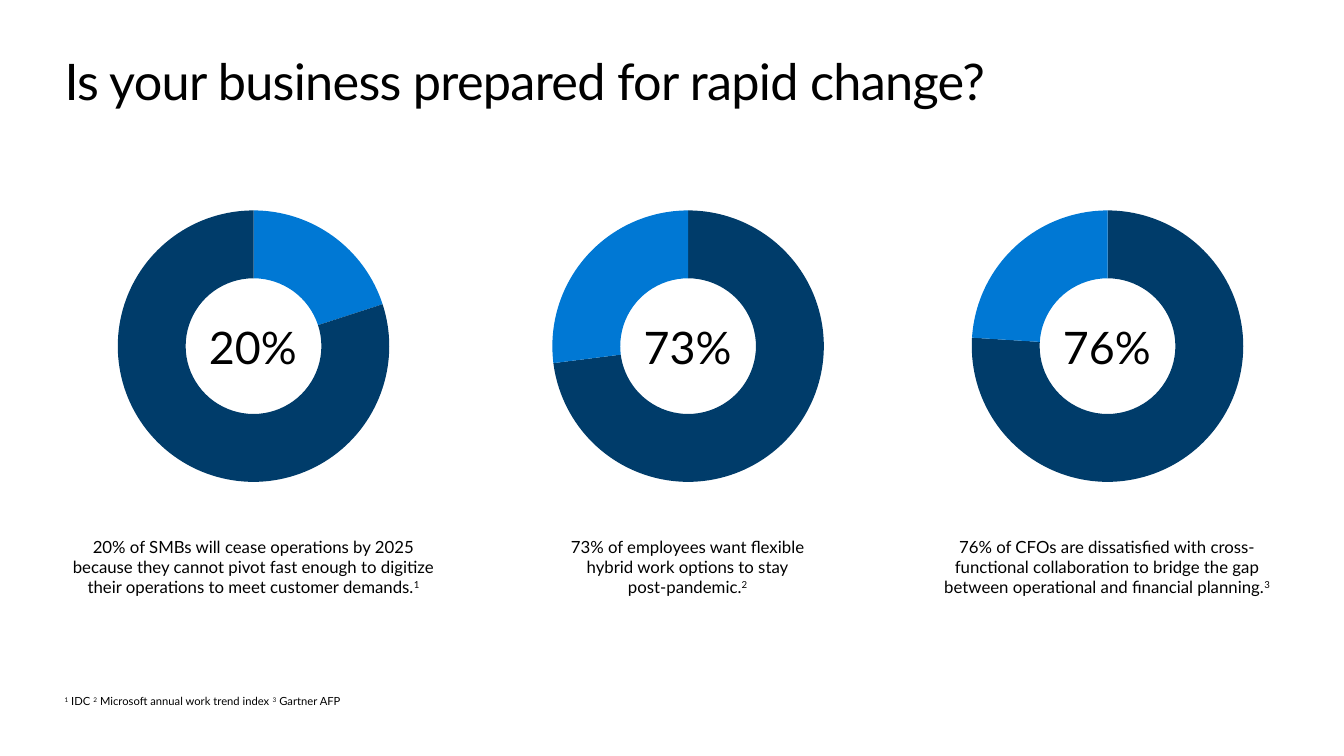
from pptx import Presentation
from pptx.chart.data import CategoryChartData
from pptx.dml.color import RGBColor
from pptx.enum.chart import XL_CHART_TYPE
from pptx.enum.shapes import MSO_SHAPE
from pptx.enum.text import MSO_ANCHOR, PP_ALIGN
from pptx.oxml import parse_xml
from pptx.oxml.ns import nsdecls, qn
from pptx.util import Emu, Pt

PX = 9144
FONT = "Lato"
BLACK, NAVY, BLUE = "000000", "003C6A", "0078D4"
CHART_SIZE, CHART_TOP = 311, 188
CENTER_SIZE, CENTER_TOP = 156, 266
CAPTION_TOP, CAPTION_HEIGHT = 532, 61

STATS = [
    (251, 20, (BLUE, NAVY), 373,
     "20% of SMBs will cease operations by 2025 because they cannot pivot fast "
     "enough to digitize their operations to meet customer demands.^1^"),
    (682, 73, (NAVY, BLUE), 342,
     "73% of employees want flexible\nhybrid work options to stay\npost-pandemic.^2^"),
    (1098, 76, (NAVY, BLUE), 342,
     "76% of CFOs are dissatisfied with cross-functional collaboration to bridge "
     "the gap between operational and financial planning.^3^"),
]


def px(*values):
    return [Emu(v * PX) for v in values]


def rgb(value):
    return RGBColor.from_string(value)


def write(sp, text, size, align=PP_ALIGN.LEFT, anchor=MSO_ANCHOR.TOP,
          insets=(0, 0, 0, 0), spacing=0):
    tf = sp.text_frame
    tf.word_wrap = True
    tf.vertical_anchor = anchor
    tf.margin_left, tf.margin_top, tf.margin_right, tf.margin_bottom = px(*insets)
    p = tf.paragraphs[0]
    p.alignment = align
    for i, part in enumerate(text.split("^")):
        for j, line in enumerate(part.split("\n")):
            if j:
                p.add_line_break()
            if not line:
                continue
            r = p.add_run()
            r.text = line
            r.font.name = FONT
            r.font.size = Pt(size)
            r.font.color.rgb = rgb(BLACK)
            rPr = r._r.get_or_add_rPr()
            if i % 2:
                rPr.set("baseline", "30000")
            if spacing:
                rPr.set("spc", str(spacing))


def add_text(s, box, text, size, **fmt):
    write(s.shapes.add_textbox(*px(*box)), text, size, **fmt)


def add_ring(s, cx, percent, colors):
    data = CategoryChartData()
    data.categories = ["1", "2"]
    data.add_series("Series 1", (percent, 100 - percent))
    box = px(cx - CHART_SIZE // 2, CHART_TOP, CHART_SIZE, CHART_SIZE)
    chart = s.shapes.add_chart(XL_CHART_TYPE.DOUGHNUT, *box, data).chart
    chart.has_legend = False
    chart.has_title = False
    chart.font.name = FONT
    chart.font.size = Pt(10)
    chart.font.color.rgb = rgb(BLACK)
    plot = chart.plots[0]
    plot.vary_by_categories = True
    plot.has_data_labels = False
    for i, color in enumerate(colors):
        fmt = plot.series[0].points[i].format
        fmt.fill.solid()
        fmt.fill.fore_color.rgb = rgb(color)
        fmt.line.fill.background()
    area = chart._chartSpace.find(".//" + qn("c:plotArea"))
    area.find(".//" + qn("c:holeSize")).set("val", "65")
    for old in area.findall(qn("c:layout")):
        area.remove(old)
    area.insert(0, parse_xml(
        f'<c:layout {nsdecls("c")}><c:manualLayout><c:layoutTarget val="inner"/>'
        '<c:xMode val="edge"/><c:yMode val="edge"/><c:x val="0.067"/><c:y val="0.043"/>'
        '<c:w val="0.866"/><c:h val="0.914"/></c:manualLayout></c:layout>'))


def add_center(s, cx, percent):
    box = px(cx - CENTER_SIZE // 2, CENTER_TOP, CENTER_SIZE, CENTER_SIZE)
    sp = s.shapes.add_shape(MSO_SHAPE.OVAL, *box)
    sp.shadow.inherit = False
    sp.fill.background()
    sp.line.fill.background()
    write(sp, f"{percent}%", 32, align=PP_ALIGN.CENTER, anchor=MSO_ANCHOR.MIDDLE)


def main():
    prs = Presentation()
    prs.slide_width, prs.slide_height = px(1333, 750)
    s = prs.slides.add_slide(prs.slide_layouts[6])
    add_text(s, (64, 50, 1205, 61), "Is your business prepared for rapid change?",
             36, spacing=-50)
    for cx, percent, colors, width, caption in STATS:
        add_ring(s, cx, percent, colors)
        add_center(s, cx, percent)
        add_text(s, (cx - width // 2, CAPTION_TOP, width, CAPTION_HEIGHT), caption,
                 12, align=PP_ALIGN.CENTER)
    add_text(s, (64, 684, 852, 24),
             "^1^ IDC ^2^ Microsoft annual work trend index ^3^ Gartner AFP",
             8, insets=(0, 5, 10, 5))
    prs.save("out.pptx")


if __name__ == "__main__":
    main()
